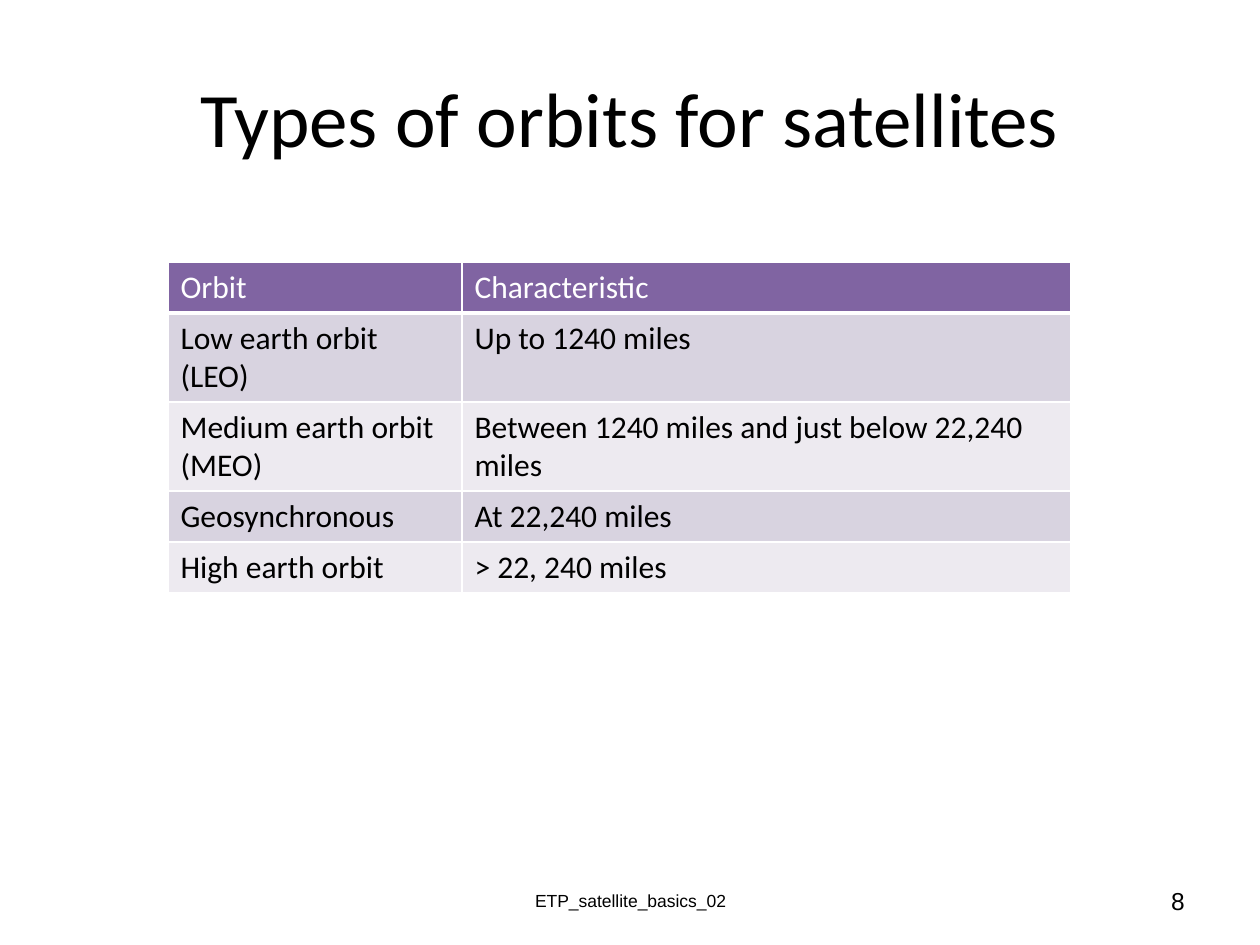
from lxml.etree import SubElement
from pptx import Presentation
from pptx.dml.color import RGBColor
from pptx.enum.text import MSO_ANCHOR as Anchor, PP_ALIGN as Align
from pptx.oxml.ns import qn
from pptx.util import Pt

TEXTS = [
    ("ETP_satellite_basics_02", (431, 876, 399, 50), Align.CENTER, "Arial", 10),
    ("8", (903, 876, 294, 50), Align.RIGHT, "Arial", 14),
    ("Types of orbits for satellites", (63, 38, 1134, 157), Align.CENTER, "Calibri", 44),
]
ORBITS = [
    ("Orbit", "Characteristic"),
    ("Low earth orbit (LEO)", "Up to 1240 miles"),
    ("Medium earth orbit (MEO)", "Between 1240 miles and just below 22,240 miles"),
    ("Geosynchronous", "At 22,240 miles"),
    ("High earth orbit", "> 22, 240 miles"),
]
TABLE_LEFT, TABLE_TOP = 168, 262
COLUMN_WIDTHS = [294, 609]
ROW_HEIGHTS = [51, 89, 89, 51, 51]
HEADER_FILL = "8064A2"
BAND_FILLS = ["EDEAF0", "D8D3E0"]
BLACK, WHITE = "000000", "FFFFFF"


def px(length):
    return round(length * 914400 / 126)


def color(code):
    return RGBColor.from_string(code)


def write(frame, text, font, size, code, align=Align.LEFT):
    para = frame.paragraphs[0]
    para.alignment = align
    span = para.add_run()
    span.text = text
    span.font.name = font
    span.font.size = Pt(size)
    span.font.color.rgb = color(code)


def add_text(page, text, place, align, font, size):
    box = page.shapes.add_textbox(*map(px, place))
    frame = box.text_frame
    frame.word_wrap = True
    frame.vertical_anchor = Anchor.MIDDLE
    write(frame, text, font, size, BLACK, align)


def set_borders(cell, widths):
    properties = cell._tc.get_or_add_tcPr()
    for side, width in widths.items():
        line = SubElement(properties, qn(f"a:ln{side}"), w=str(Pt(width)))
        fill = SubElement(line, qn("a:solidFill"))
        SubElement(fill, qn("a:srgbClr"), val=WHITE)


def add_orbit_table(page):
    table = page.shapes.add_table(
        len(ORBITS), len(COLUMN_WIDTHS), px(TABLE_LEFT), px(TABLE_TOP),
        px(sum(COLUMN_WIDTHS)), px(sum(ROW_HEIGHTS))).table
    for column, width in zip(table.columns, COLUMN_WIDTHS):
        column.width = px(width)
    for index, (row, height) in enumerate(zip(table.rows, ROW_HEIGHTS)):
        row.height = px(height)
        header = index == 0
        for cell, text in zip(row.cells, ORBITS[index]):
            top = 3 if index == 1 else 1
            bottom = 3 if header else 1
            set_borders(cell, {"L": 1, "R": 1, "T": top, "B": bottom})
            cell.fill.solid()
            cell.fill.fore_color.rgb = color(HEADER_FILL if header else BAND_FILLS[index % 2])
            write(cell.text_frame, text, "Calibri", 18, WHITE if header else BLACK)
            if header:
                cell.text_frame.paragraphs[0].runs[0].font.bold = False


def main():
    deck = Presentation()
    deck.slide_width, deck.slide_height = px(1260), px(945)
    page = deck.slides.add_slide(deck.slide_layouts[6])
    for item in TEXTS:
        add_text(page, *item)
    add_orbit_table(page)
    deck.save("out.pptx")


if __name__ == "__main__":
    main()
